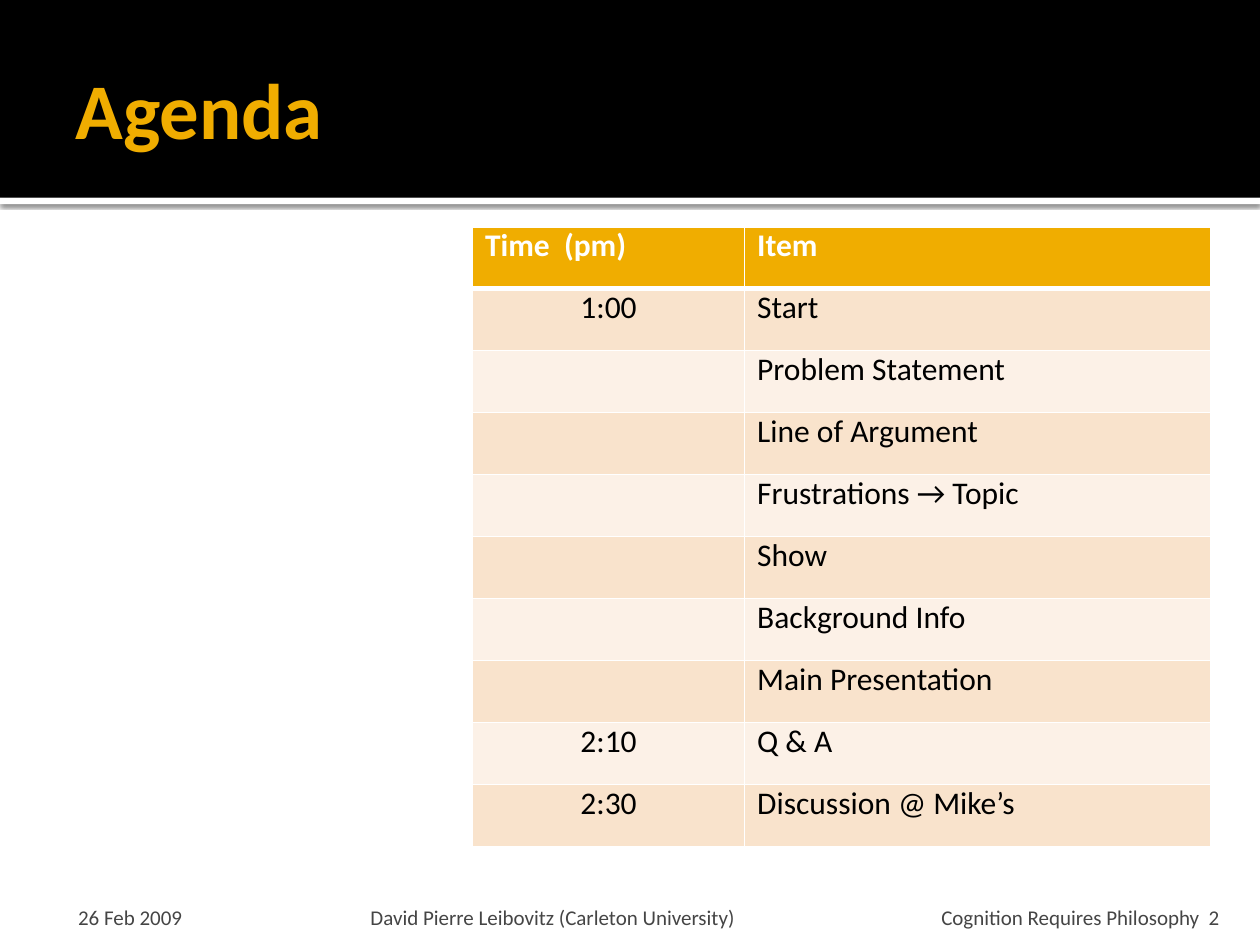
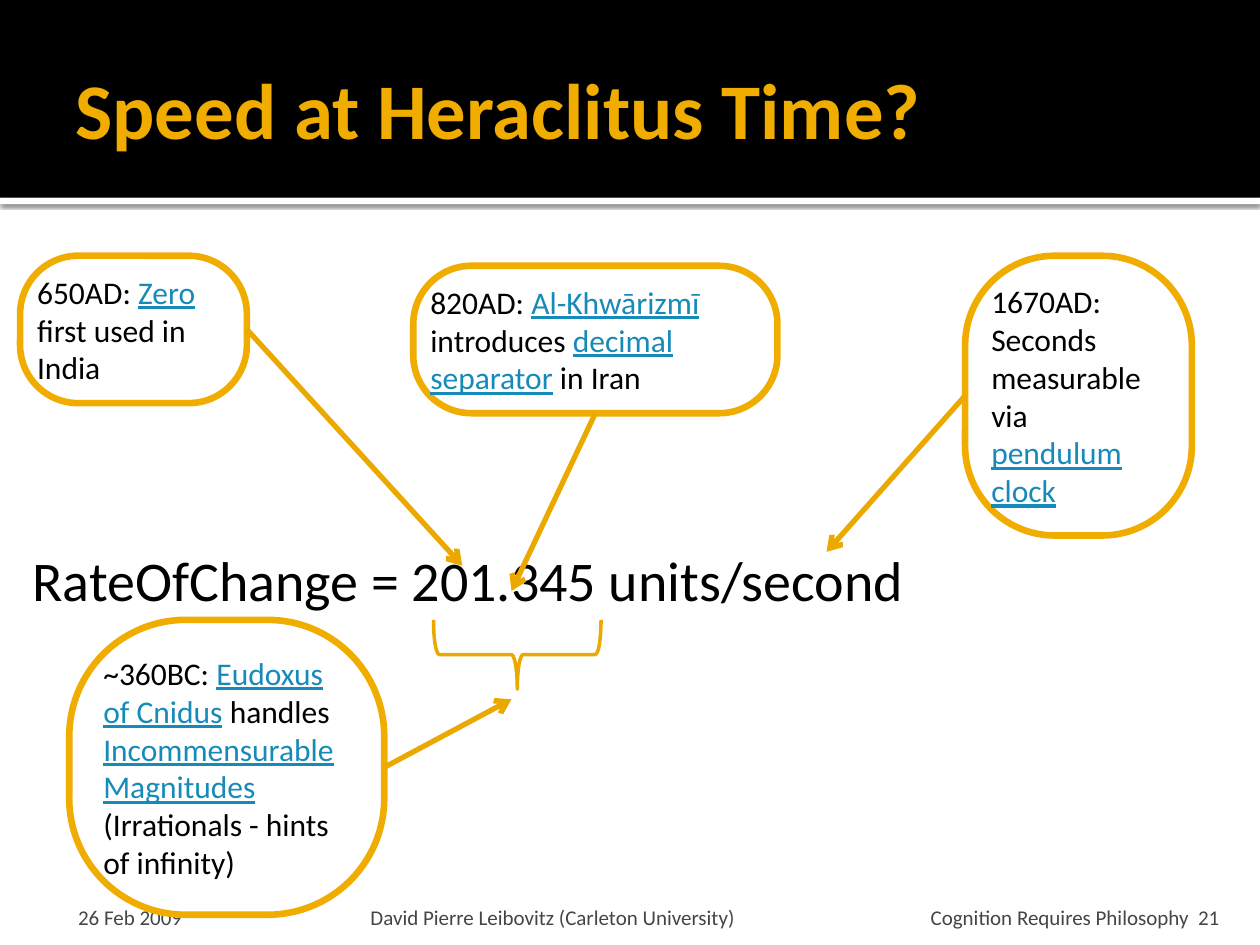
from dataclasses import dataclass
from typing import NamedTuple

from lxml.etree import SubElement
from pptx import Presentation
from pptx.dml.color import RGBColor
from pptx.enum.shapes import MSO_CONNECTOR as Connector, MSO_SHAPE as Preset
from pptx.enum.text import MSO_ANCHOR as Anchor, PP_ALIGN as Align
from pptx.oxml.ns import qn
from pptx.util import Inches, Pt


@dataclass(frozen=True)
class Theme:
    font: str = "Calibri"
    black: str = "000000"
    white: str = "FFFFFF"
    gold: str = "F0AD00"
    dark_gold: str = "EBA900"
    link: str = "168BBA"
    footer: str = "454545"
    stripes: tuple = ("F9E3CC", "FCF1E7")
    title_size: float = 45
    formula_size: float = 32
    body_size: float = 18
    footer_size: float = 12


THEME = Theme()


class Area(NamedTuple):
    left: float
    top: float
    width: float
    height: float

    def lengths(self) -> list:
        return [Inches(value) for value in self]


class Span(NamedTuple):
    text: str
    linked: bool = False


class Footer(NamedTuple):
    text: str
    area: Area
    insets: tuple
    align: Align = Align.LEFT


class Callout(NamedTuple):
    area: Area
    spans: tuple
    side: int
    target: tuple


BOTTOM, LEFT, RIGHT = 2, 1, 3

AGENDA = (
    ("Time  (pm)", "Item"),
    ("1:00", "Start"),
    ("", "Problem Statement"),
    ("", "Line of Argument"),
    ("", "Frustrations → Topic"),
    ("", "Show"),
    ("", "Background Info"),
    ("", "Main Presentation"),
    ("2:10", "Q & A"),
    ("2:30", "Discussion @ Mike’s"),
)

CALLOUTS = (
    Callout(
        Area(0.16, 2.03, 1.8, 1.17),
        (Span("650AD: "), Span("Zero", True), Span(" first used in India")),
        RIGHT,
        (3.67, 4.49),
    ),
    Callout(
        Area(7.66, 2.03, 1.8, 2.22),
        (Span("1670AD: Seconds measurable via "), Span("pendulum clock", True)),
        LEFT,
        (6.56, 4.38),
    ),
    Callout(
        Area(3.28, 2.11, 2.89, 1.17),
        (
            Span("820AD: "),
            Span("Al-Khwārizmī", True),
            Span(" introduces "),
            Span("decimal separator", True),
            Span(" in Iran"),
        ),
        BOTTOM,
        (4.06, 4.69),
    ),
    Callout(
        Area(0.55, 4.92, 2.5, 2.34),
        (
            Span("~360BC: "),
            Span("Eudoxus of Cnidus", True),
            Span(" handles "),
            Span("Incommensurable Magnitudes", True),
            Span(" (Irrationals - hints of infinity)"),
        ),
        RIGHT,
        (4.06, 5.55),
    ),
)


def color(value: str) -> RGBColor:
    return RGBColor.from_string(value)


def add_span(para, text: str, size: float, ink: str, bold: bool = False,
             underline: bool = False) -> None:
    span = para.add_run()
    span.text = text
    font = span.font
    font.name, font.size, font.bold = THEME.font, Pt(size), bold
    font.underline = underline
    font.color.rgb = color(ink)


def set_frame(frame, insets: tuple, anchor: Anchor) -> None:
    frame.word_wrap = True
    frame.vertical_anchor = anchor
    (frame.margin_left, frame.margin_top,
     frame.margin_right, frame.margin_bottom) = (Inches(inset) for inset in insets)


def add_text(page, area: Area, text: str, size: float, ink: str,
             insets: tuple = (0.1, 0.05, 0.1, 0.05), anchor: Anchor = Anchor.TOP,
             align: Align = Align.LEFT, bold: bool = False) -> None:
    box = page.shapes.add_textbox(*area.lengths())
    set_frame(box.text_frame, insets, anchor)
    para = box.text_frame.paragraphs[0]
    para.alignment = align
    add_span(para, text, size, ink, bold)


def add_band(page, area: Area, fill: str):
    band = page.shapes.add_shape(Preset.RECTANGLE, *area.lengths())
    band.shadow.inherit = False
    band.fill.solid()
    band.fill.fore_color.rgb = color(fill)
    band.line.fill.background()
    return band


def add_drop_shadow(shape) -> None:
    effects = shape.element.spPr.find(qn("a:effectLst"))
    shadow = SubElement(effects, qn("a:outerShdw"), blurRad=str(Pt(2.5)),
                        dist=str(Pt(0.8)), dir="5400000", algn="tl", rotWithShape="0")
    ink = SubElement(shadow, qn("a:srgbClr"), val=THEME.black)
    SubElement(ink, qn("a:alpha"), val="60000")


def add_page(deck, title: str, number: int):
    page = deck.slides.add_slide(deck.slide_layouts[6])
    add_drop_shadow(add_band(page, Area(0, 1.57, 10, 0.05), THEME.white))
    add_band(page, Area(0, 0, 10, 1.57), THEME.black)
    add_text(page, Area(0.5, 0.17, 9, 1.37), title, THEME.title_size, THEME.gold,
             (0.1, 0.05, 0.05, 0.05), Anchor.MIDDLE, bold=True)
    footers = (
        Footer("26 Feb 2009", Area(0.5, 7.08, 2.33, 0.3), (0.12, 0.05, 0.05, 0)),
        Footer("David Pierre Leibovitz (Carleton University)",
               Area(2.89, 7.08, 4.22, 0.3), (0.05, 0.05, 0.05, 0)),
        Footer(f"Cognition Requires Philosophy  {number}",
               Area(7.11, 7.08, 2.67, 0.3), (0.1, 0.05, 0.1, 0), Align.RIGHT),
    )
    for footer in footers:
        add_text(page, footer.area, footer.text, THEME.footer_size, THEME.footer,
                 footer.insets, Anchor.BOTTOM, footer.align)
    return page


def add_borders(cell, top: float, bottom: float) -> None:
    properties = cell._tc.get_or_add_tcPr()
    for tag, width in (("lnL", 1), ("lnR", 1), ("lnT", top), ("lnB", bottom)):
        border = SubElement(properties, qn(f"a:{tag}"), w=str(Pt(width)))
        fill = SubElement(border, qn("a:solidFill"))
        SubElement(fill, qn("a:srgbClr"), val=THEME.white)


def fill_cell(cell, text: str, row: int, column: int) -> None:
    header = row == 0
    add_borders(cell, 3 if row == 1 else 1, 3 if header else 1)
    cell.fill.solid()
    cell.fill.fore_color.rgb = color(THEME.gold if header else THEME.stripes[(row - 1) % 2])
    cell.margin_left = cell.margin_right = Inches(0.1)
    cell.margin_top = cell.margin_bottom = Inches(0)
    para = cell.text_frame.paragraphs[0]
    if column == 0 and not header:
        para.alignment = Align.CENTER
    if text:
        add_span(para, text, THEME.body_size, THEME.white if header else THEME.black, header)
    else:
        para.font.size = Pt(THEME.body_size)


def add_agenda(page) -> None:
    area = Area(3.75, 1.8, 5.86, 4.92)
    table = page.shapes.add_table(len(AGENDA), 2, *area.lengths()).table
    for column, width in zip(table.columns, (2.16, 3.7)):
        column.width = Inches(width)
    for row, entry in enumerate(AGENDA):
        for column, text in enumerate(entry):
            fill_cell(table.cell(row, column), text, row, column)


def add_arrow(page, source, side: int, target: tuple) -> None:
    end = [Inches(value) for value in target]
    arrow = page.shapes.add_connector(Connector.STRAIGHT, *end, *end)
    arrow.begin_connect(source, side)
    arrow.line.color.rgb = color(THEME.dark_gold)
    arrow.line.width = Pt(3)
    SubElement(arrow.line._get_or_add_ln(), qn("a:tailEnd"), type="arrow")
    SubElement(arrow._element.spPr, qn("a:effectLst"))


def add_callout(page, callout: Callout) -> None:
    box = page.shapes.add_shape(Preset.ROUNDED_RECTANGLE, *callout.area.lengths())
    box.shadow.inherit = False
    box.adjustments[0] = 0.395
    box.fill.solid()
    box.fill.fore_color.rgb = color(THEME.white)
    box.line.color.rgb = color(THEME.gold)
    box.line.width = Pt(3.78)
    set_frame(box.text_frame, (0, 0, 0, 0), Anchor.MIDDLE)
    para = box.text_frame.paragraphs[0]
    para.alignment = Align.LEFT
    for text, linked in callout.spans:
        add_span(para, text, THEME.body_size, THEME.link if linked else THEME.black,
                 underline=linked)
    add_arrow(page, box, callout.side, callout.target)


def add_digits_brace(page) -> None:
    brace = page.shapes.add_shape(Preset.RIGHT_BRACE, *Area(3.83, 4.53, 0.55, 1.33).lengths())
    brace.shadow.inherit = False
    brace.rotation = 90
    brace.fill.background()
    brace.line.color.rgb = color(THEME.dark_gold)
    brace.line.width = Pt(2)


def main() -> None:
    deck = Presentation()
    deck.slide_width, deck.slide_height = Inches(10), Inches(7.5)

    add_agenda(add_page(deck, "Agenda", 2))

    speed_page = add_page(deck, "Speed at Heraclitus Time?", 21)
    add_text(speed_page, Area(0.16, 4.28, 7.27, 0.64),
             "RateOfChange = 201.345 units/second", THEME.formula_size, THEME.black)
    for callout in CALLOUTS:
        add_callout(speed_page, callout)
    add_digits_brace(speed_page)

    deck.save("out.pptx")


if __name__ == "__main__":
    main()
